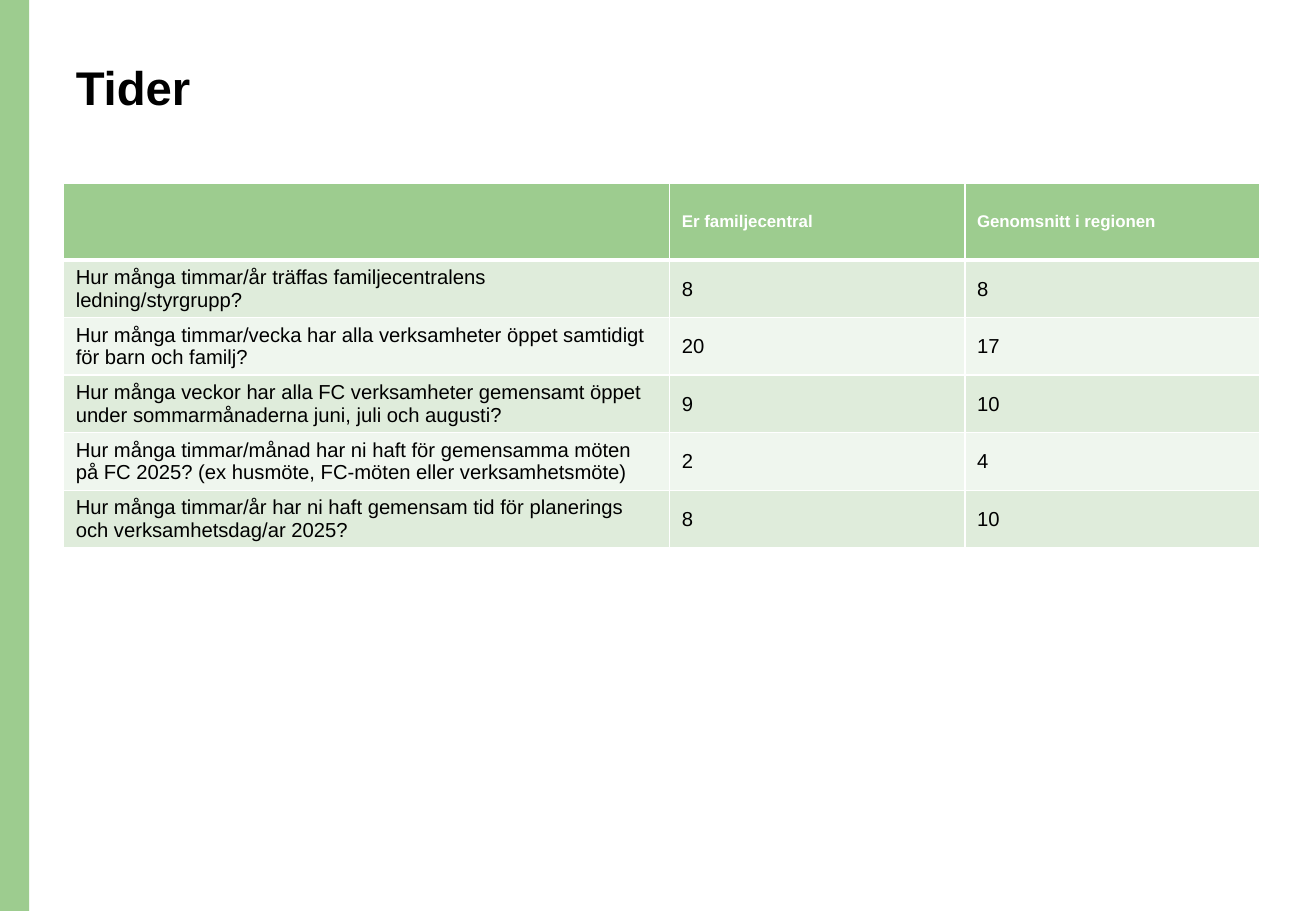
from lxml import etree
from pptx import Presentation
from pptx.dml.color import RGBColor
from pptx.enum.shapes import MSO_SHAPE
from pptx.enum.text import MSO_ANCHOR, MSO_AUTO_SIZE, PP_ALIGN
from pptx.oxml.ns import qn
from pptx.util import Cm, Pt

RECT = MSO_SHAPE.RECTANGLE
TOP, MIDDLE = MSO_ANCHOR.TOP, MSO_ANCHOR.MIDDLE
LEFT = PP_ALIGN.LEFT
NO_FIT = MSO_AUTO_SIZE.NONE

COLORS = {
    "green": "9DCC8F",
    "band": "DFECDB",
    "pale": "EFF6EE",
    "white": "FFFFFF",
    "black": "000000",
}
ROWS = [
    ("", "Er familjecentral", "Genomsnitt i regionen"),
    ("Hur många timmar/år träffas familjecentralens ledning/styrgrupp?", "8", "8"),
    ("Hur många timmar/vecka har alla verksamheter öppet samtidigt för barn och familj?", "20", "17"),
    ("Hur många veckor har alla FC verksamheter gemensamt öppet under sommarmånaderna juni, juli och augusti?", "9", "10"),
    ("Hur många timmar/månad har ni haft för gemensamma möten på FC 2025? (ex husmöte, FC-möten eller verksamhetsmöte)", "2", "4"),
    ("Hur många timmar/år har ni haft gemensam tid för planerings och verksamhetsdag/ar 2025?", "8", "10"),
]
WIDTHS = [12.67, 6.17, 6.17]
HEAD, BODY = 1.6, 1.2


def write(frame, text, size=12, color="black", bold=False, anchor=MIDDLE, spacing=None):
    frame.word_wrap = True
    frame.vertical_anchor = anchor
    para = frame.paragraphs[0]
    para.alignment = LEFT
    para.line_spacing = spacing
    run = para.add_run()
    run.text = text
    run.font.name = "Arial"
    run.font.size = Pt(size)
    run.font.bold = bold
    run.font.color.rgb = RGBColor.from_string(COLORS[color])


def border(cell, side, width):
    props = cell._tc.get_or_add_tcPr()
    line = etree.SubElement(props, qn("a:ln" + side), w=str(Pt(width)))
    fill = etree.SubElement(line, qn("a:solidFill"))
    etree.SubElement(fill, qn("a:srgbClr"), val=COLORS["white"])


deck = Presentation()
deck.slide_width, deck.slide_height = Cm(27.51), Cm(19.05)
slide = deck.slides.add_slide(deck.slide_layouts[5])

bar = slide.shapes.add_shape(RECT, Cm(0), Cm(0), Cm(0.61), deck.slide_height)
bar.shadow.inherit = False
bar.fill.solid()
bar.fill.fore_color.rgb = RGBColor.from_string(COLORS["green"])
bar.line.fill.background()

title = slide.shapes.title
title.left, title.top = Cm(1.33), Cm(1.22)
title.width, title.height = Cm(23.72), Cm(2.59)
title.text_frame.auto_size = NO_FIT
write(title.text_frame, "Tider", size=28, bold=True, anchor=TOP, spacing=0.9)

height = HEAD + BODY * (len(ROWS) - 1)
table = slide.shapes.add_table(
    len(ROWS), len(WIDTHS), Cm(1.33), Cm(3.84), Cm(sum(WIDTHS)), Cm(height)
).table
for col, width in zip(table.columns, WIDTHS):
    col.width = Cm(width)

for r, row in enumerate(ROWS):
    head = r == 0
    table.rows[r].height = Cm(HEAD if head else BODY)
    shade = "green" if head else "band" if r % 2 else "pale"
    for c, text in enumerate(row):
        cell = table.cell(r, c)
        cell.vertical_anchor = MIDDLE
        for side in "LRTB":
            thick = (head and side == "B") or (r == 1 and side == "T")
            border(cell, side, 3 if thick else 1)
        cell.fill.solid()
        cell.fill.fore_color.rgb = RGBColor.from_string(COLORS[shade])
        if head and text:
            write(cell.text_frame, text, size=10, color="white", bold=True)
        elif text:
            write(cell.text_frame, text)

deck.save("out.pptx")
